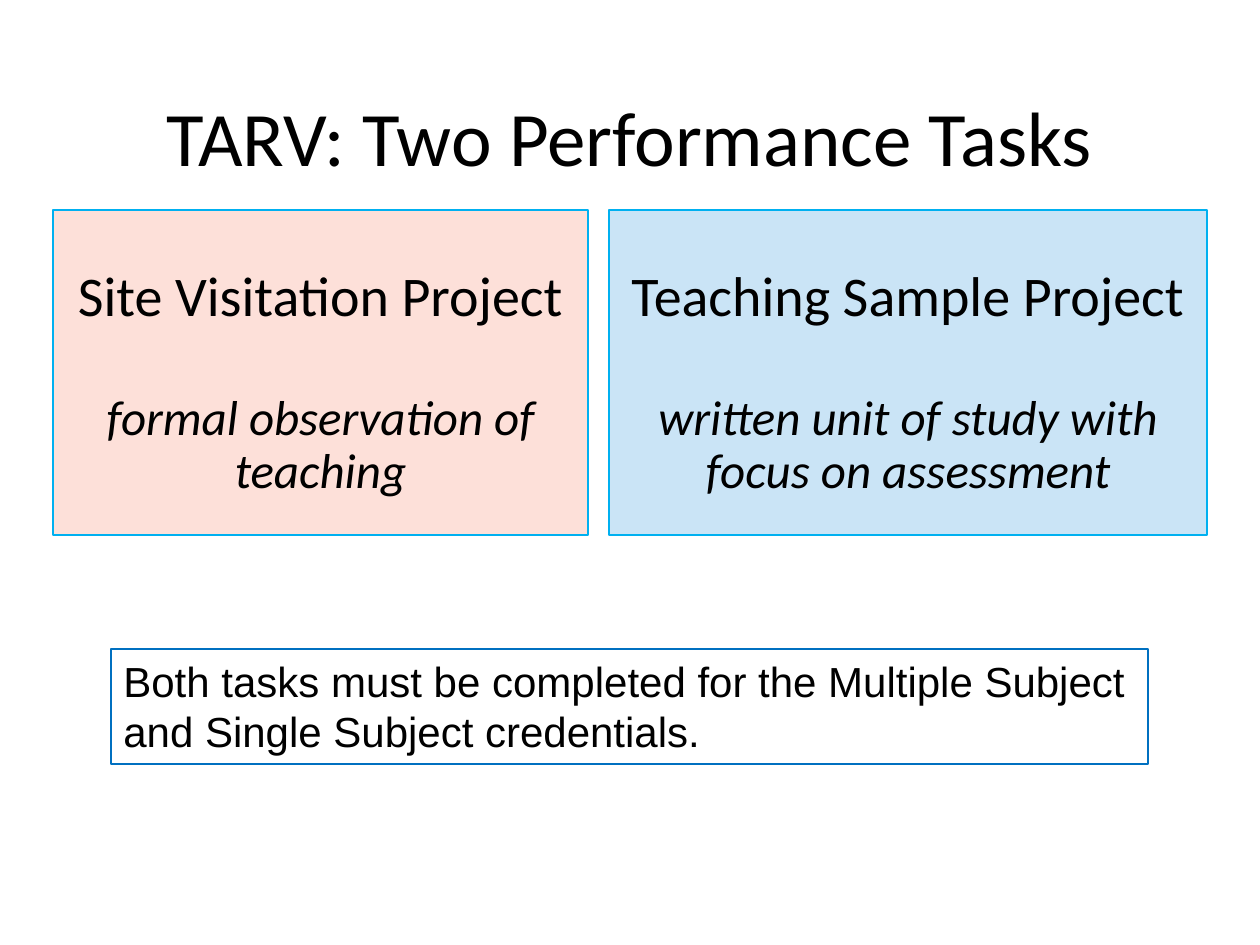
from pptx import Presentation
from pptx.dml.color import RGBColor
from pptx.enum.shapes import MSO_SHAPE
from pptx.enum.text import MSO_ANCHOR, PP_ALIGN
from pptx.util import Emu, Pt

PX = 914400 // 126
COLORS = {
    "text": "000000",
    "visitation": "FDE0D9",
    "sample": "CAE4F6",
    "card_line": "00B0F0",
    "note_line": "0070C0",
}


def px(value):
    return Emu(value * PX)


def color(name):
    return RGBColor.from_string(COLORS[name])


def format_paragraph(paragraph, text, size, font="Calibri",
                     align=PP_ALIGN.CENTER, line_spacing=0.9, italic=False):
    paragraph.text = text
    paragraph.alignment = align
    paragraph.line_spacing = line_spacing
    paragraph.space_before = Pt(0)
    paragraph.font.name = font
    paragraph.font.size = Pt(size)
    paragraph.font.italic = italic
    paragraph.font.color.rgb = color("text")


def set_line(shape, name):
    shape.line.color.rgb = color(name)
    shape.line.width = Pt(0.75)


def place_title(slide, box, text):
    title = slide.shapes.title
    title.left, title.top, title.width, title.height = map(px, box)
    title.text_frame.vertical_anchor = MSO_ANCHOR.MIDDLE
    format_paragraph(title.text_frame.paragraphs[0], text, 44)


def add_task_card(slide, box, fill, heading, description):
    card = slide.shapes.add_shape(MSO_SHAPE.RECTANGLE, *map(px, box))
    card.shadow.inherit = False
    card.fill.solid()
    card.fill.fore_color.rgb = color(fill)
    set_line(card, "card_line")
    frame = card.text_frame
    frame.word_wrap = True
    frame.vertical_anchor = MSO_ANCHOR.TOP
    frame.margin_top = px(58)
    format_paragraph(frame.paragraphs[0], heading, 32)
    paragraph = frame.add_paragraph()
    format_paragraph(paragraph, description, 28, italic=True)
    paragraph.space_before = Pt(37)


def add_note(slide, box, lines):
    note = slide.shapes.add_textbox(*map(px, box))
    set_line(note, "note_line")
    frame = note.text_frame
    frame.word_wrap = False
    for index, line in enumerate(lines):
        paragraph = frame.add_paragraph() if index else frame.paragraphs[0]
        format_paragraph(paragraph, line, 24, "Arial", PP_ALIGN.LEFT, 1.0)


def main():
    presentation = Presentation()
    presentation.slide_width, presentation.slide_height = px(1260), px(945)
    slide = presentation.slides.add_slide(presentation.slide_layouts[5])
    place_title(slide, (87, 50, 1086, 183), "TARV: Two Performance Tasks")
    add_task_card(slide, (53, 210, 535, 325), "visitation",
                  "Site Visitation Project", "formal observation of teaching")
    add_task_card(slide, (609, 210, 598, 325), "sample",
                  "Teaching Sample Project",
                  "written unit of study with focus on assessment")
    add_note(slide, (111, 649, 1037, 115),
             ["Both tasks must be completed for the Multiple Subject",
              "and Single Subject credentials."])
    presentation.save("out.pptx")


if __name__ == "__main__":
    main()
